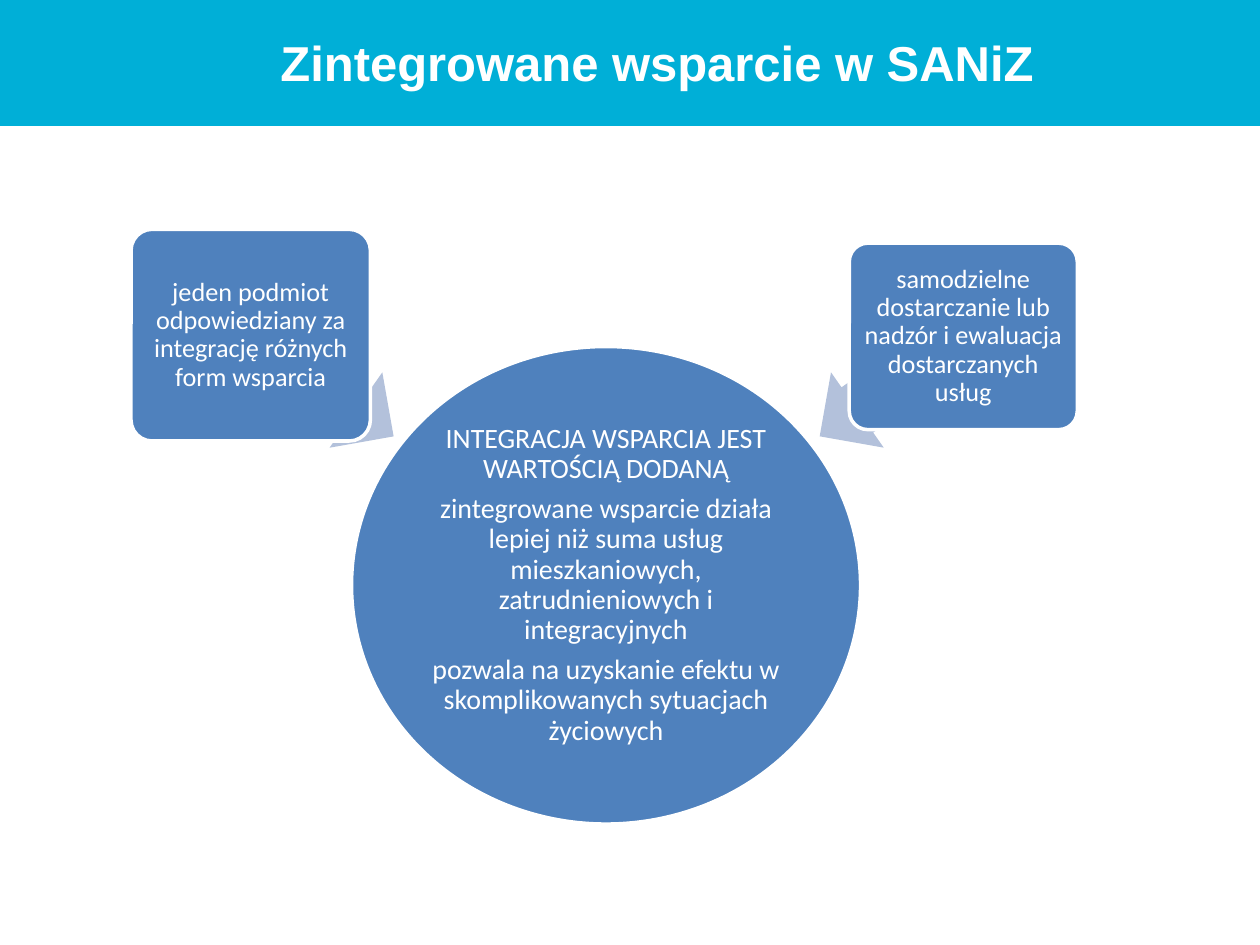
from dataclasses import dataclass

import pptx
import pptx.dml.color
import pptx.enum.shapes
import pptx.enum.text
import pptx.util
from pptx.util import Inches

Preset = pptx.enum.shapes.MSO_SHAPE
CYAN, BLUE, PALE_BLUE, WHITE = "00AFD7", "4F81BD", "B3C1DB", "FFFFFF"


@dataclass
class Box:
    left: float
    top: float
    width: float
    height: float


@dataclass
class Bubble:
    preset: Preset
    box: Box
    texts: list[str]
    size: int
    inset: float


@dataclass
class Arrow:
    box: Box
    rotation: int


def color(value: str) -> pptx.dml.color.RGBColor:
    return pptx.dml.color.RGBColor.from_string(value)


def add_shape(slide, preset: Preset, box: Box, fill: str):
    """Add a filled preset shape without outline or shadow."""
    shape = slide.shapes.add_shape(
        preset, Inches(box.left), Inches(box.top), Inches(box.width), Inches(box.height)
    )
    shape.shadow.inherit = False
    shape.fill.solid()
    shape.fill.fore_color.rgb = color(fill)
    shape.line.fill.background()
    return shape


def style_paragraph(paragraph, font_name: str, size: int, bold: bool = False) -> None:
    paragraph.alignment = pptx.enum.text.PP_ALIGN.CENTER
    paragraph.font.name = font_name
    paragraph.font.size = pptx.util.Pt(size)
    paragraph.font.bold = bold
    paragraph.font.color.rgb = color(WHITE)


def add_title(slide, text: str) -> None:
    add_shape(slide, Preset.RECTANGLE, Box(0, 0, 10, 1), CYAN)
    title = slide.shapes.add_textbox(Inches(0.43), Inches(0.21), Inches(9.57), Inches(0.57))
    title.text_frame.word_wrap = True
    title.text_frame.text = text
    style_paragraph(title.text_frame.paragraphs[0], "Arial", 28, bold=True)


def add_bubble(slide, bubble: Bubble) -> None:
    shape = add_shape(slide, bubble.preset, bubble.box, BLUE)
    if bubble.preset == Preset.ROUNDED_RECTANGLE:
        shape.adjustments[0] = 0.1
    shape.line.color.rgb = color(WHITE)
    shape.line.width = pptx.util.Pt(2)

    frame = shape.text_frame
    frame.word_wrap = True
    frame.vertical_anchor = pptx.enum.text.MSO_ANCHOR.MIDDLE
    frame.margin_left = frame.margin_right = Inches(bubble.inset)
    frame.margin_top = frame.margin_bottom = Inches(bubble.inset)
    frame.text = "\n".join(bubble.texts)
    for paragraph in frame.paragraphs:
        style_paragraph(paragraph, "Calibri", bubble.size)
        paragraph.line_spacing = 0.9
        paragraph.space_after = pptx.util.Pt(0.35 * bubble.size)


def add_arrow(slide, arrow: Arrow) -> None:
    shape = add_shape(slide, Preset.LEFT_ARROW, arrow.box, PALE_BLUE)
    shape.adjustments[0] = 0.6
    shape.adjustments[1] = 0.5
    shape.rotation = arrow.rotation


CORE = Bubble(
    Preset.OVAL,
    Box(2.79, 2.75, 4.04, 3.79),
    [
        "INTEGRACJA WSPARCIA JEST WARTOŚCIĄ DODANĄ",
        "zintegrowane wsparcie działa lepiej niż suma usług mieszkaniowych, "
        "zatrudnieniowych i integracyjnych",
        "pozwala na uzyskanie efektu w skomplikowanych sytuacjach życiowych",
    ],
    16,
    0.01,
)
CONTRIBUTIONS = [
    (
        Arrow(Box(1.86, 2.7, 1.39, 0.73), 215),
        Bubble(
            Preset.ROUNDED_RECTANGLE,
            Box(1.04, 1.82, 1.9, 1.68),
            ["jeden podmiot odpowiedziany za integrację różnych form wsparcia"],
            15,
            0.03,
        ),
    ),
    (
        Arrow(Box(6.38, 2.7, 1.39, 0.73), 325),
        Bubble(
            Preset.ROUNDED_RECTANGLE,
            Box(6.74, 1.93, 1.81, 1.48),
            ["samodzielne dostarczanie lub nadzór i ewaluacja dostarczanych usług"],
            15,
            0.03,
        ),
    ),
]


def main() -> None:
    presentation = pptx.Presentation()
    presentation.slide_width = Inches(10)
    presentation.slide_height = Inches(7.5)
    slide = presentation.slides.add_slide(presentation.slide_layouts[6])

    add_title(slide, "Zintegrowane wsparcie w SANiZ")
    add_bubble(slide, CORE)
    for arrow, bubble in CONTRIBUTIONS:
        add_arrow(slide, arrow)
        add_bubble(slide, bubble)

    presentation.save("out.pptx")


if __name__ == "__main__":
    main()
